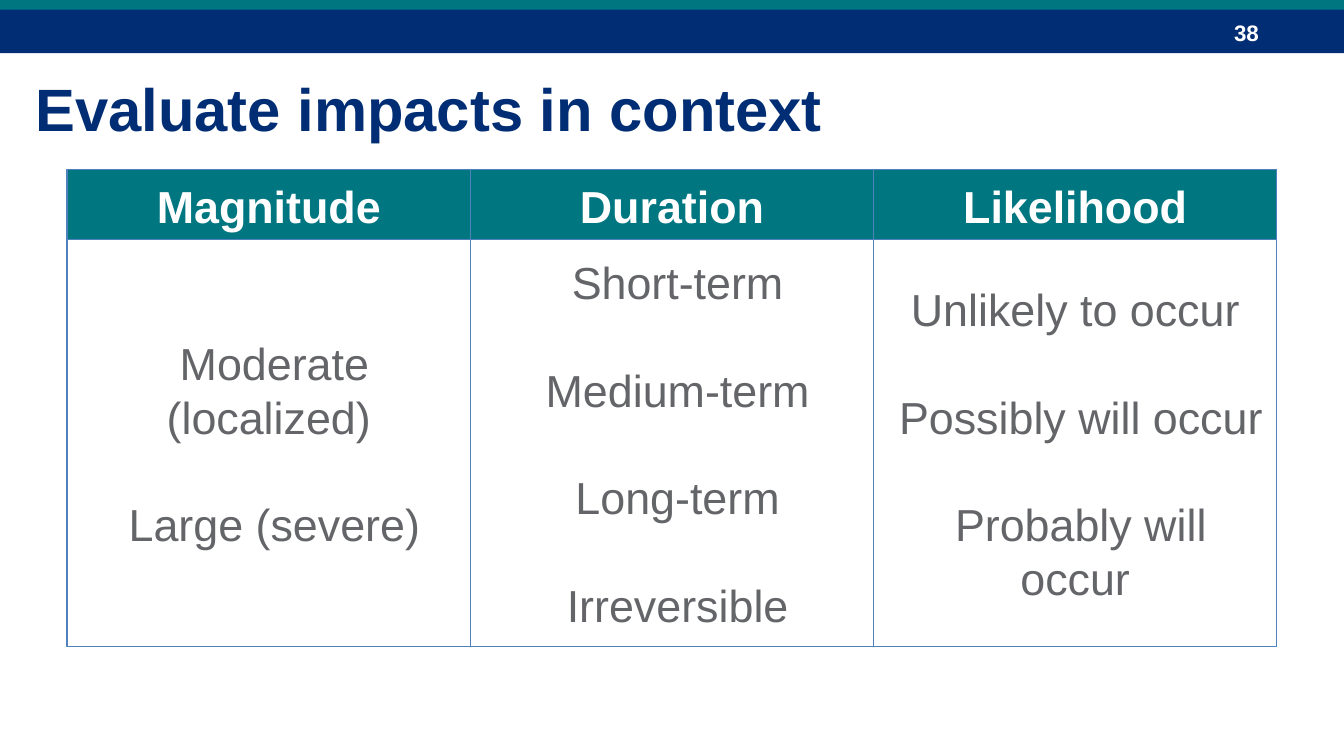
from pptx import Presentation, util as u
from pptx.dml.color import RGBColor
from pptx.enum import shapes, text

PX = 9525
NAVY, TEAL, BLUE, GRAY, WHITE = "002D73", "007681", "4F81BD", "646569", "FFFFFF"
LEFT, TOP, WIDE, HEAD, BODY = 48, 121, 288, 50, 291
LEAD = 8
COLUMNS = [
    ("Magnitude", ["Moderate (localized)", "Large (severe)"], LEAD),
    ("Duration", ["Short-term", "Medium-term", "Long-term", "Irreversible"], LEAD),
    ("Likelihood", ["Unlikely to occur", "Possibly will occur", "Probably will occur"], 0),
]


def color(code):
    return RGBColor.from_string(code)


def px(*sizes):
    return [u.Emu(size * PX) for size in sizes]


def write(shape, lines, size=24, ink=GRAY, bold=False, anchor="MIDDLE",
          align="CENTER", pitch=None, start=0, lead=0):
    frame = shape.text_frame
    frame.word_wrap = True
    frame.vertical_anchor = text.MSO_ANCHOR[anchor]
    for i, line in enumerate(lines):
        para = frame.paragraphs[0] if i == 0 else frame.add_paragraph()
        para.text = line
        para.alignment = text.PP_ALIGN[align]
        indent = lead if i else start
        if indent:
            para._p.get_or_add_pPr().set("indent", str(indent * PX))
        if pitch:
            para.line_spacing = u.Pt(pitch)
            if i:
                para.space_before = u.Pt(pitch)
        font = para.font
        font.name, font.size, font.bold = "Arial", u.Pt(size), bold
        font.color.rgb = color(ink)


def rect(slide, x, y, w, h, fill=None, line=None):
    box = slide.shapes.add_shape(shapes.MSO_SHAPE.RECTANGLE, *px(x, y, w, h))
    box.shadow.inherit = False
    if fill:
        box.fill.solid()
        box.fill.fore_color.rgb = color(fill)
    else:
        box.fill.background()
    if line:
        box.line.color.rgb = color(line)
        box.line.width = u.Pt(0.75)
    else:
        box.line.fill.background()
    return box


def label(slide, x, y, w, h, words, **style):
    box = slide.shapes.add_textbox(*px(x, y, w, h))
    write(box, [words], bold=True, align="LEFT", **style)


def column(slide, x, title, items, start):
    head = rect(slide, x, TOP, WIDE, HEAD, TEAL, BLUE)
    write(head, [title], ink=WHITE, bold=True, anchor="BOTTOM")
    body = rect(slide, x, TOP + HEAD, WIDE, BODY, line=BLUE)
    write(body, items, pitch=28.8, start=start, lead=LEAD)


def main():
    deck = Presentation()
    deck.slide_width, deck.slide_height = px(960, 540)
    slide = deck.slides.add_slide(deck.slide_layouts[6])
    rect(slide, 0, 6, 960, 32, NAVY)
    label(slide, 872, 9, 72, 29, "38", size=12, ink=WHITE)
    rect(slide, 0, -2, 960, 9, TEAL)
    label(slide, 16, 46, 912, 61, "Evaluate impacts in context",
          size=32, ink=NAVY, anchor="BOTTOM")
    for i, (title, items, start) in enumerate(COLUMNS):
        column(slide, LEFT + i * WIDE, title, items, start)
    deck.save("out.pptx")


if __name__ == "__main__":
    main()
